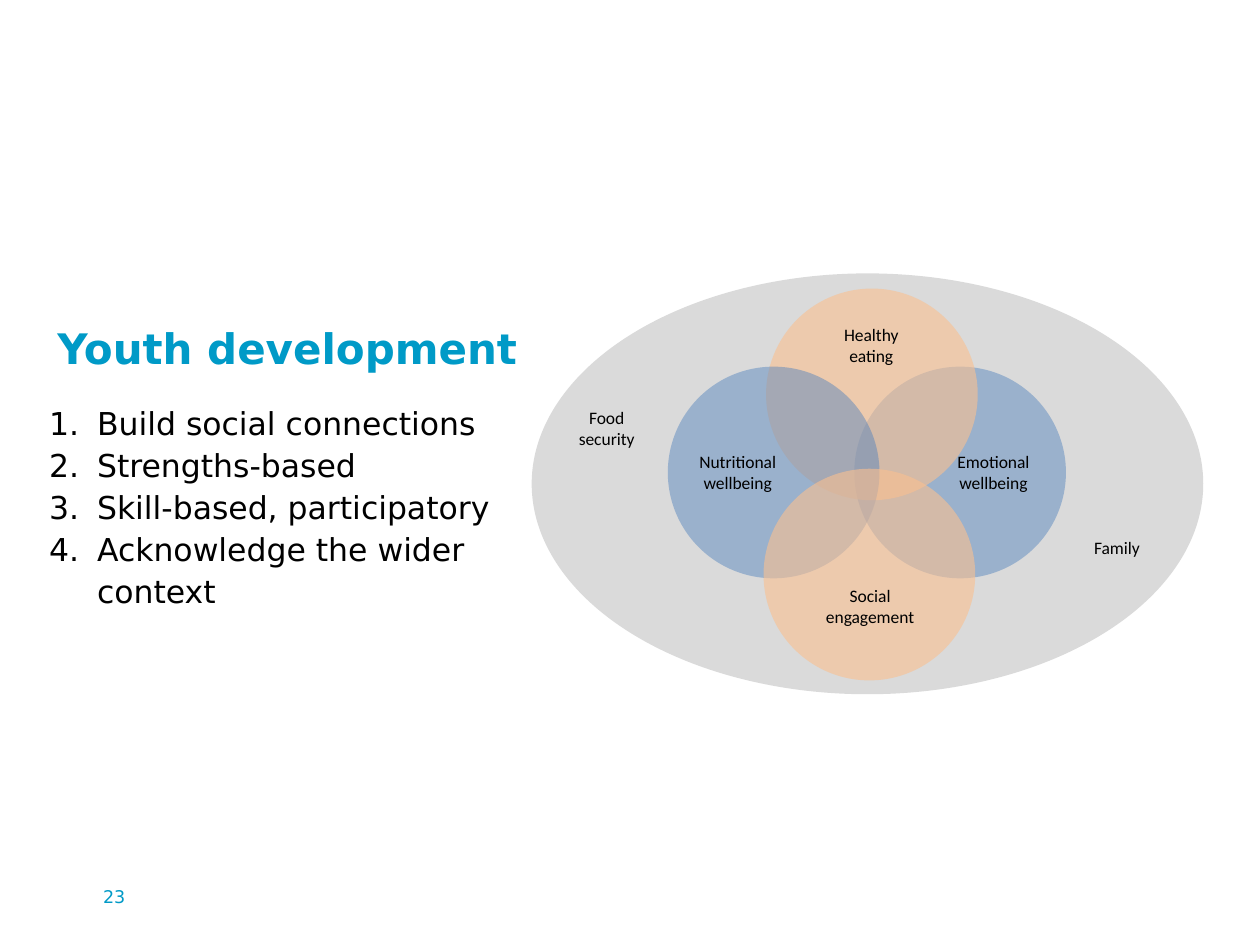
from dataclasses import dataclass

from pptx import Presentation
from pptx.dml.color import RGBColor
from pptx.enum.shapes import MSO_SHAPE
from pptx.enum.text import MSO_ANCHOR, MSO_AUTO_SIZE, PP_ALIGN
from pptx.oxml.ns import qn
from pptx.shapes.group import GroupShape
from pptx.text.text import TextFrame
from pptx.util import Emu, Pt

ELLIPSE = MSO_SHAPE.OVAL
TOP = MSO_ANCHOR.TOP
NO_FIT, GROW = MSO_AUTO_SIZE.NONE, MSO_AUTO_SIZE.SHAPE_TO_FIT_TEXT
LEFT, CENTER = PP_ALIGN.LEFT, PP_ALIGN.CENTER

BLACK = RGBColor(0x00, 0x00, 0x00)
TEAL = RGBColor(0x00, 0x9A, 0xC7)
GREY = RGBColor(0x80, 0x80, 0x80)
BLUE = RGBColor(0x4F, 0x81, 0xBD)
PEACH = RGBColor(0xFA, 0xC0, 0x90)

HEADING_FONT, LABEL_FONT = "DejaVu Sans", "Calibri"
EMU_PER_PX = 9144  # 100 px to the inch
CIRCLE = 168
LABEL_INSET = 8
INDENT = 38

PRINCIPLES = [
    "Build social connections",
    "Strengths-based",
    "Skill-based, participatory",
    "Acknowledge the wider context",
]


@dataclass(frozen=True)
class Oval:
    left: int
    top: int
    color: RGBColor
    opacity: int
    width: int = CIRCLE
    height: int = CIRCLE


@dataclass(frozen=True)
class Label:
    text: str
    left: int
    top: int
    width: int = 83
    height: int = 44


OVALS = [
    Oval(422, 217, GREY, 29, 533, 334),
    Oval(678, 291, BLUE, 46),
    Oval(608, 229, PEACH, 60),
    Oval(530, 291, BLUE, 46),
    Oval(606, 372, PEACH, 60),
]

LABELS = [
    Label("Nutritional wellbeing", 544, 353),
    Label("Emotional wellbeing", 747, 353),
    Label("Healthy eating", 650, 252),
    Label("Social engagement", 645, 459, width=91),
    Label("Food security", 440, 318),
    Label("Family", 845, 421, height=27),
]


def px(value: int) -> Emu:
    return Emu(value * EMU_PER_PX)


def place(shape, left: int, top: int, width: int, height: int) -> None:
    shape.left, shape.top = px(left), px(top)
    shape.width, shape.height = px(width), px(height)


def format_text(frame: TextFrame, font: str, size: int, color: RGBColor,
                align: PP_ALIGN, bold: bool = False, fit: MSO_AUTO_SIZE = NO_FIT) -> None:
    frame.word_wrap = True
    frame.auto_size = fit
    frame.vertical_anchor = TOP
    for paragraph in frame.paragraphs:
        paragraph.alignment = align
        for run in paragraph.runs:
            run.font.name = font
            run.font.size = Pt(size)
            run.font.bold = bold
            run.font.color.rgb = color


def number_paragraphs(frame: TextFrame) -> None:
    for paragraph in frame.paragraphs:
        properties = paragraph._p.get_or_add_pPr()
        properties.set("marL", str(px(INDENT)))
        properties.set("indent", str(-px(INDENT)))
        numbering = properties.makeelement(qn("a:buAutoNum"), {"type": "arabicPeriod"})
        properties.append(numbering)
        paragraph.line_spacing = Pt(24)
        paragraph.space_before = Pt(0)


def draw_oval(group: GroupShape, oval: Oval) -> None:
    shape = group.shapes.add_shape(ELLIPSE, px(oval.left), px(oval.top),
                                   px(oval.width), px(oval.height))
    shape.shadow.inherit = False
    shape.line.fill.background()
    shape.fill.solid()
    shape.fill.fore_color.rgb = oval.color
    color = shape._element.spPr.find(qn("a:solidFill")).find(qn("a:srgbClr"))
    color.append(color.makeelement(qn("a:alpha"), {"val": str(oval.opacity * 1000)}))


def draw_label(group: GroupShape, label: Label) -> None:
    box = group.shapes.add_textbox(px(label.left), px(label.top),
                                   px(label.width), px(label.height))
    frame = box.text_frame
    frame.text = label.text
    frame.margin_left = frame.margin_right = px(LABEL_INSET)
    format_text(frame, LABEL_FONT, 10, BLACK, CENTER, fit=GROW)


def main() -> None:
    presentation = Presentation()
    presentation.slide_width, presentation.slide_height = px(1000), px(750)
    slide = presentation.slides.add_slide(presentation.slide_layouts[1])

    page_number = slide.shapes.add_textbox(px(72), px(698), px(70), px(52))
    page_number.text_frame.text = "23"
    format_text(page_number.text_frame, HEADING_FONT, 10, TEAL, LEFT)

    title = slide.shapes.title
    place(title, 7, 249, 442, 60)
    title.text_frame.text = "Youth development"
    title.text_frame.margin_top = px(7)
    format_text(title.text_frame, HEADING_FONT, 24, TEAL, CENTER, bold=True)

    principles = slide.placeholders[1]
    place(principles, 29, 312, 378, 270)
    principles.text_frame.text = "\n".join(PRINCIPLES)
    number_paragraphs(principles.text_frame)
    format_text(principles.text_frame, HEADING_FONT, 18, BLACK, LEFT)

    wellbeing_diagram = slide.shapes.add_group_shape()
    for oval in OVALS:
        draw_oval(wellbeing_diagram, oval)
    for label in LABELS:
        draw_label(wellbeing_diagram, label)

    presentation.save("out.pptx")


if __name__ == "__main__":
    main()
